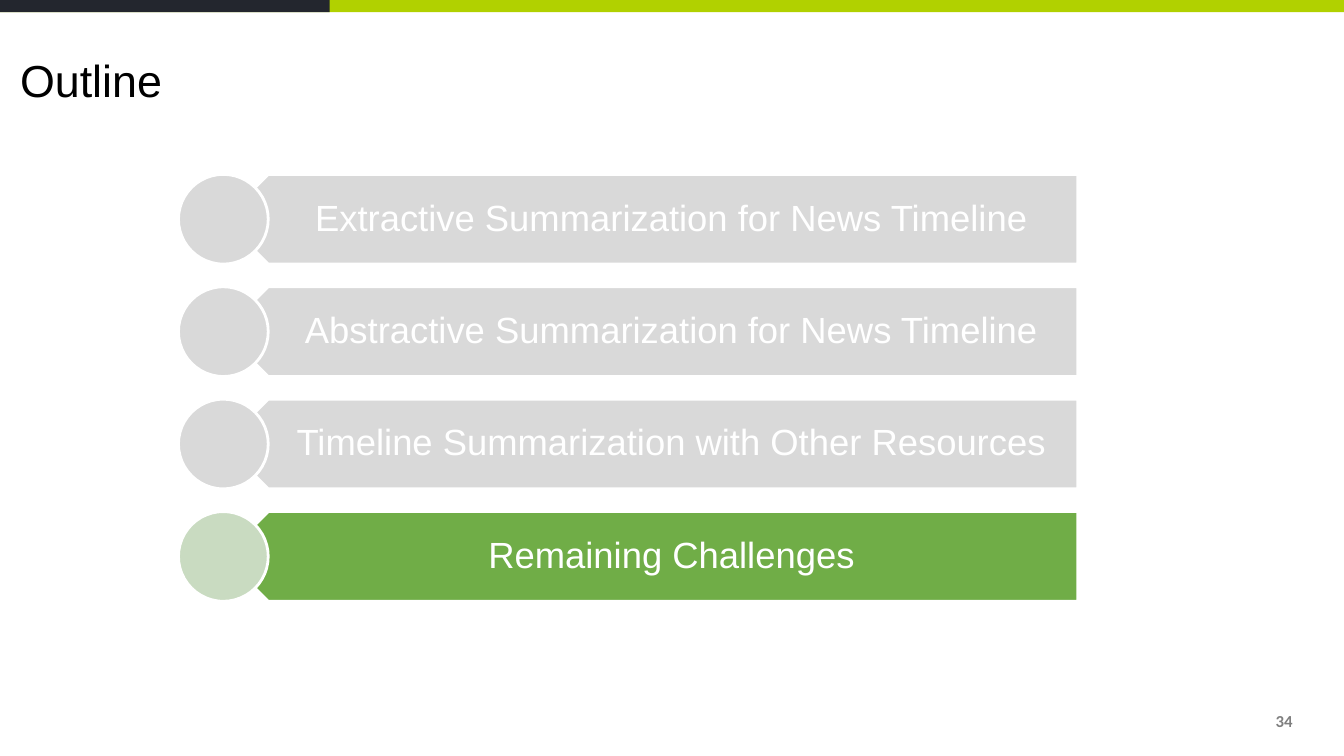
from pptx import Presentation
from pptx.dml.color import RGBColor
from pptx.enum.shapes import MSO_SHAPE
from pptx.enum.text import MSO_ANCHOR, PP_ALIGN
from pptx.util import Inches, Pt

RECT, OVAL = MSO_SHAPE.RECTANGLE, MSO_SHAPE.OVAL
MIDDLE = MSO_ANCHOR.MIDDLE
LEFT, CENTER, RIGHT = PP_ALIGN.LEFT, PP_ALIGN.CENTER, PP_ALIGN.RIGHT

LIME = RGBColor(0xB1, 0xD1, 0x00)
DARK = RGBColor(0x23, 0x26, 0x2E)
BLACK = RGBColor(0, 0, 0)
WHITE = RGBColor(0xFF, 0xFF, 0xFF)
GRAY = RGBColor(0xD9, 0xD9, 0xD9)
MID_GRAY = RGBColor(0x7F, 0x7F, 0x7F)
GREEN = RGBColor(0x70, 0xAD, 0x47)
PALE_GREEN = RGBColor(0xC9, 0xDB, 0xC1)

TITLE = "Outline"
PAGE = "34"
TOPICS = [  # text, banner colour, circle colour
    ("Extractive Summarization for News Timeline", GRAY, GRAY),
    ("Abstractive Summarization for News Timeline", GRAY, GRAY),
    ("Timeline Summarization with Other Resources", GRAY, GRAY),
    ("Remaining Challenges", GREEN, PALE_GREEN),
]

WIDTH, HEIGHT = Inches(13.33), Inches(7.5)
STRIPE_H = Inches(0.12)
SIZE = Inches(0.89)  # circle diameter and banner height
PITCH = Inches(1.115)
FIRST_TOP = Inches(1.73)
CIRCLE_LEFT = Inches(1.77)
BANNER_RIGHT = Inches(10.69)
BOX_INSETS = (0.1, 0.05, 0.1, 0.05)
BANNER_INSETS = (0.62, 0.11, 0.2, 0.11)


def style(sp, fill, outline=None):
    sp.shadow.inherit = False
    sp.fill.solid()
    sp.fill.fore_color.rgb = fill
    if outline is None:
        sp.line.fill.background()
    else:
        sp.line.color.rgb = outline
        sp.line.width = Pt(2)


def write(sp, text, size, color, align, insets, font="Arial", bold=False, spacing=0.9):
    tf = sp.text_frame
    tf.text = text
    tf.word_wrap = True
    tf.vertical_anchor = MIDDLE
    tf.margin_left, tf.margin_top, tf.margin_right, tf.margin_bottom = map(Inches, insets)
    p = tf.paragraphs[0]
    p.alignment = align
    p.line_spacing = spacing
    f = p.runs[0].font
    f.name, f.size, f.bold = font, Pt(size), bold
    f.color.rgb = color


def add_banner(shapes, top):
    """Draw a bar whose left end is a point at the circle's centre."""
    tip, shoulder, bottom = CIRCLE_LEFT + SIZE // 2, CIRCLE_LEFT + SIZE, top + SIZE
    fb = shapes.build_freeform(BANNER_RIGHT, bottom)
    fb.add_line_segments([
        (shoulder, bottom), (tip, top + SIZE // 2), (shoulder, top), (BANNER_RIGHT, top),
    ])
    return fb.convert_to_shape()


def main():
    prs = Presentation()
    prs.slide_width, prs.slide_height = WIDTH, HEIGHT
    shapes = prs.slides.add_slide(prs.slide_layouts[6]).shapes

    for width, color in ((WIDTH, LIME), (Inches(3.27), DARK)):
        style(shapes.add_shape(RECT, 0, 0, width, STRIPE_H), color)

    title = shapes.add_textbox(Inches(0.1), Inches(0.51), Inches(12.51), Inches(0.62))
    write(title, TITLE, 32, BLACK, LEFT, BOX_INSETS)
    page = shapes.add_textbox(Inches(9.92), Inches(6.95), Inches(3), Inches(0.4))
    write(page, PAGE, 12, MID_GRAY, RIGHT, BOX_INSETS, "Calibri", True, 1.0)

    for i, (text, banner_color, circle_color) in enumerate(TOPICS):
        top = FIRST_TOP + i * PITCH
        banner = add_banner(shapes, top)
        style(banner, banner_color, WHITE)
        write(banner, text, 26, WHITE, CENTER, BANNER_INSETS)
        circle = shapes.add_shape(OVAL, CIRCLE_LEFT, top, SIZE, SIZE)
        style(circle, circle_color, WHITE)

    prs.save("out.pptx")


if __name__ == "__main__":
    main()
